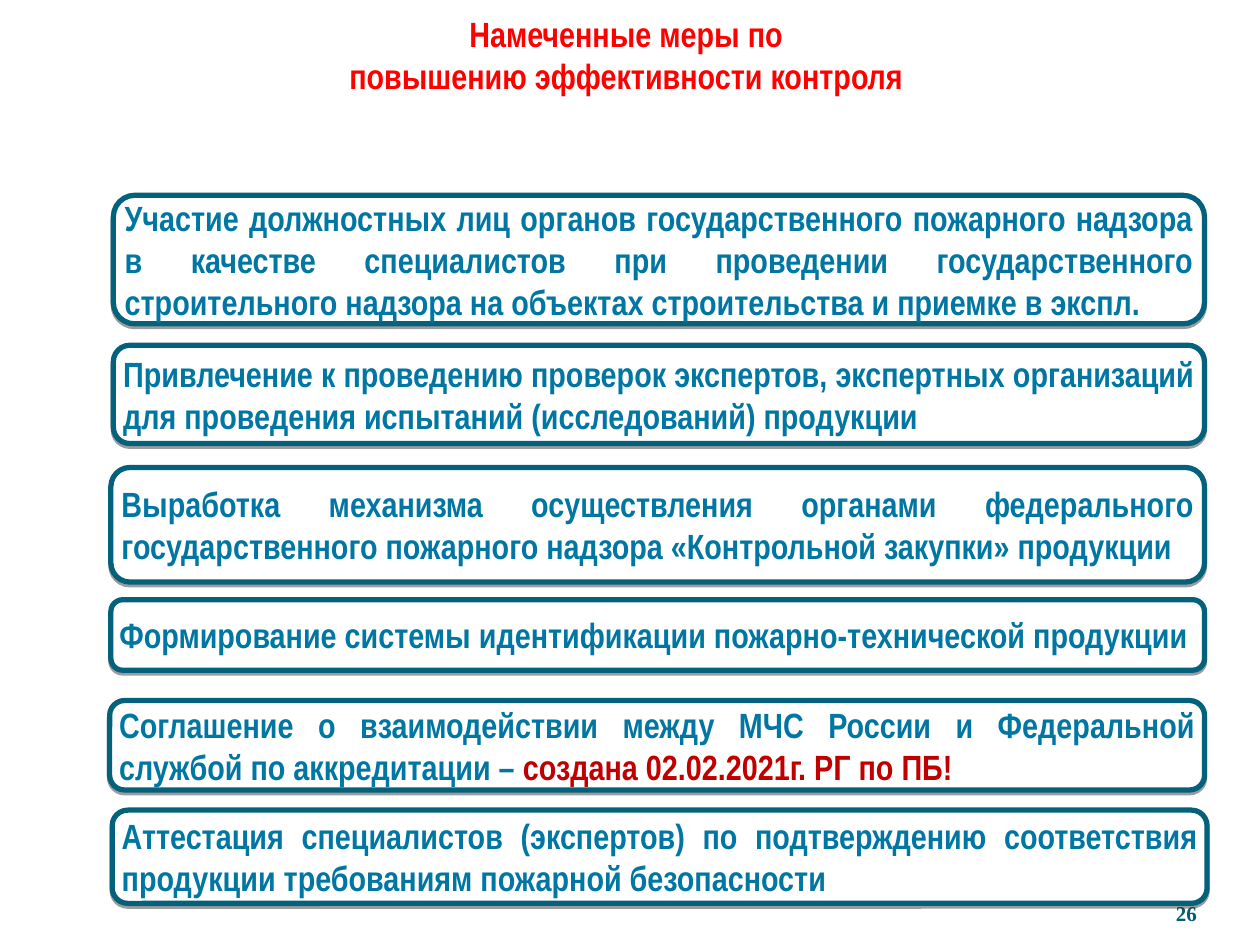
from lxml import etree
from pptx import Presentation
from pptx.dml.color import RGBColor
from pptx.enum.shapes import MSO_SHAPE
from pptx.enum.text import MSO_ANCHOR, MSO_AUTO_SIZE, PP_ALIGN
from pptx.oxml.ns import qn
from pptx.util import Inches, Pt

RED = RGBColor(0xFF, 0x00, 0x00)
DARK_RED = RGBColor(0xC0, 0x00, 0x00)
BLUE = RGBColor(0x00, 0x76, 0xA3)
TEAL = RGBColor(0x04, 0x61, 0x7B)
DARK_TEAL = RGBColor(0x04, 0x5C, 0x75)
WHITE = RGBColor(0xFF, 0xFF, 0xFF)

TITLE_LINES = ["Намеченные меры по", "повышению эффективности контроля"]

# Each measure: its box (left, top, width, height) and its coloured runs
MEASURES = [
    ((0.9, 1.55, 8.66, 1.02), [
        ("Участие должностных лиц органов государственного пожарного надзора "
         "в качестве специалистов при проведении государственного "
         "строительного надзора на объектах строительства и приемке в экспл.", BLUE)]),
    ((0.9, 2.74, 8.66, 0.78), [
        ("Привлечение к проведению проверок экспертов, экспертных организаций "
         "для проведения испытаний (исследований) продукции", BLUE)]),
    ((0.88, 3.71, 8.68, 0.91), [
        ("Выработка механизма осуществления органами федерального "
         "государственного пожарного надзора «Контрольной закупки» продукции", BLUE)]),
    ((0.88, 4.76, 8.68, 0.56), [
        ("Формирование системы идентификации пожарно-технической продукции", BLUE)]),
    ((0.87, 5.56, 8.69, 0.71), [
        ("Соглашение о взаимодействии между МЧС России и Федеральной "
         "службой по аккредитации – ", BLUE),
        ("создана 02.02.2021г. РГ по ПБ!", DARK_RED)]),
    ((0.89, 6.43, 8.69, 0.74), [
        ("Аттестация специалистов (экспертов) по подтверждению соответствия "
         "продукции требованиям пожарной безопасности", BLUE)]),
]


def set_frame(frame, anchor, left=0, top=0, right=0, bottom=0):
    frame.word_wrap = True
    frame.auto_size = MSO_AUTO_SIZE.NONE
    frame.vertical_anchor = anchor
    frame.margin_left, frame.margin_top = Inches(left), Inches(top)
    frame.margin_right, frame.margin_bottom = Inches(right), Inches(bottom)


def add_span(para, text, color, size=20, name="Arial Narrow"):
    span = para.add_run()
    span.text = text
    span.font.size = Pt(size)
    span.font.name = name
    span.font.bold = True
    span.font.color.rgb = color


def add_shadow(shape):
    """Give the shape a hard shadow just below it."""
    shape.shadow.inherit = False
    effects = shape._element.spPr.find(qn("a:effectLst"))
    shadow = etree.SubElement(effects, qn("a:outerShdw"), blurRad="0",
                              dist=str(Pt(1.6)), dir="5400000", rotWithShape="0")
    color = etree.SubElement(shadow, qn("a:srgbClr"), val="000000")
    etree.SubElement(color, qn("a:alpha"), val="38000")


def place_title(page, left, top, width, height):
    title = page.shapes.title
    title.left, title.top = Inches(left), Inches(top)
    title.width, title.height = Inches(width), Inches(height)
    set_frame(title.text_frame, MSO_ANCHOR.TOP, top=0.05)
    para = title.text_frame.paragraphs[0]
    para.alignment = PP_ALIGN.CENTER
    for index, line in enumerate(TITLE_LINES):
        if index:
            para.add_line_break()
        add_span(para, line, RED)


def add_page_number(page, left, top, width, height):
    box = page.shapes.add_textbox(Inches(left), Inches(top), Inches(width), Inches(height))
    set_frame(box.text_frame, MSO_ANCHOR.BOTTOM)
    para = box.text_frame.paragraphs[0]
    para.alignment = PP_ALIGN.RIGHT
    add_span(para, "26", DARK_TEAL, 12, "Times New Roman")


def add_measure(page, left, top, width, height, spans):
    box = page.shapes.add_shape(MSO_SHAPE.ROUNDED_RECTANGLE, Inches(left), Inches(top),
                                Inches(width), Inches(height))
    box.fill.solid()
    box.fill.fore_color.rgb = WHITE
    box.line.color.rgb = TEAL
    box.line.width = Pt(3)
    add_shadow(box)
    set_frame(box.text_frame, MSO_ANCHOR.MIDDLE, 0.04, 0.04, 0.04, 0.04)
    para = box.text_frame.paragraphs[0]
    para.alignment = PP_ALIGN.JUSTIFY
    for text, color in spans:
        add_span(para, text, color)


def main():
    deck = Presentation()
    deck.slide_width, deck.slide_height = Inches(10), Inches(7.5)
    page = deck.slides.add_slide(deck.slide_layouts[5])
    place_title(page, 0.01, 0.05, 9.92, 1.09)
    add_page_number(page, 8.83, 6.95, 0.67, 0.4)
    for place, spans in MEASURES:
        add_measure(page, *place, spans)
    deck.save("out.pptx")


if __name__ == "__main__":
    main()
